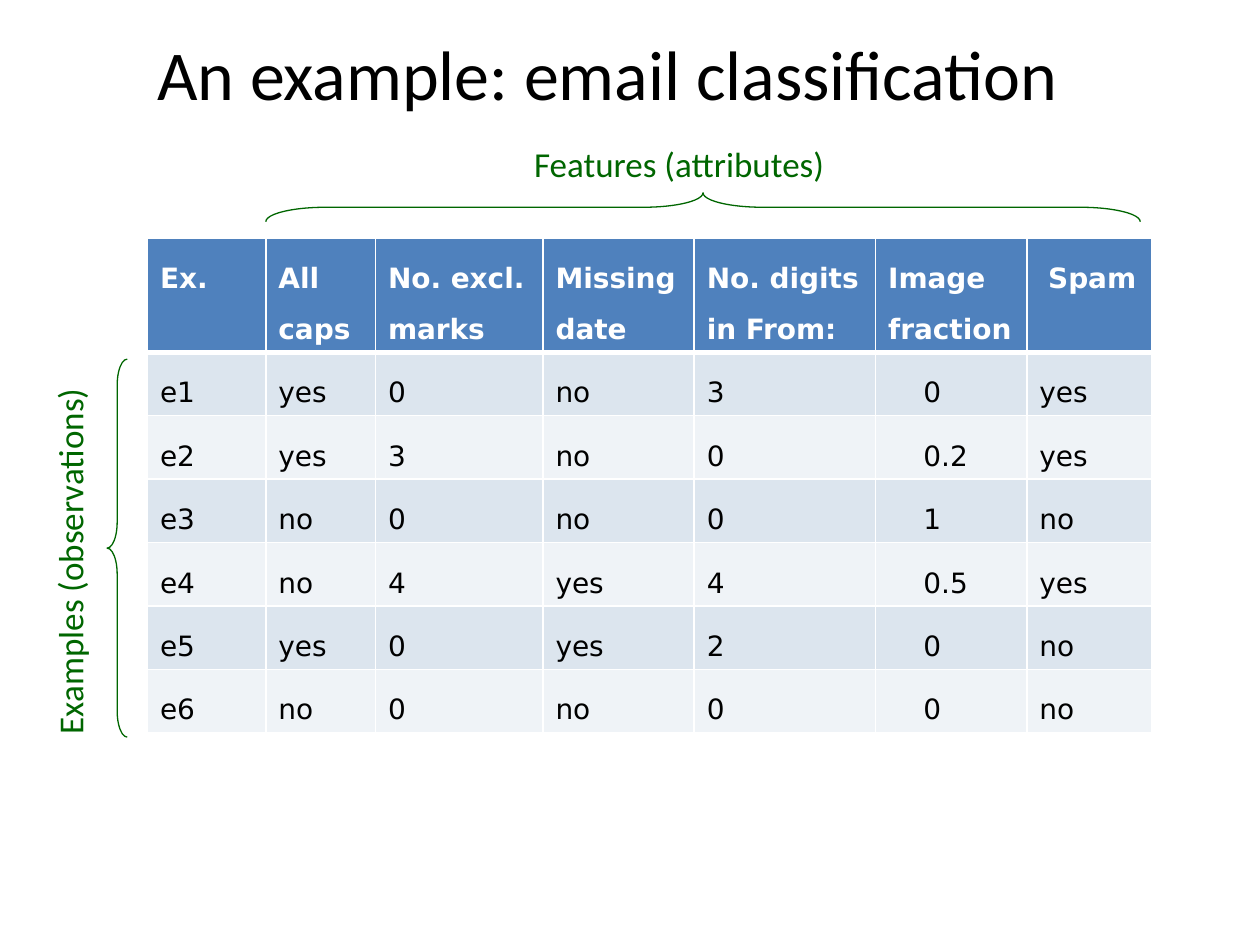
from lxml import etree
from pptx import Presentation
from pptx.dml.color import RGBColor
from pptx.enum import shapes, text
from pptx.oxml import ns
from pptx.util import Inches, Pt

BLACK = RGBColor(0x00, 0x00, 0x00)
WHITE = RGBColor(0xFF, 0xFF, 0xFF)
GREEN = RGBColor(0x00, 0x66, 0x00)
BLUE = RGBColor(0x4F, 0x81, 0xBD)
BANDS = RGBColor(0xDC, 0xE5, 0xEE), RGBColor(0xEF, 0xF3, 0xF7)

COLS = [0.94, 0.87, 1.33, 1.2, 1.44, 1.2, 0.99]
HEAD = ["Ex.", "All caps", "No. excl. marks", "Missing date",
        "No. digits in From:", "Image fraction", "Spam"]
ROWS = [
    ["e1", "yes", "0", "no", "3", "0", "yes"],
    ["e2", "yes", "3", "no", "0", "0.2", "yes"],
    ["e3", "no", "0", "no", "0", "1", "no"],
    ["e4", "no", "4", "yes", "4", "0.5", "yes"],
    ["e5", "yes", "0", "yes", "2", "0", "no"],
    ["e6", "no", "0", "no", "0", "0", "no"],
]


def write(frame, words, size=20, color=BLACK, font="Calibri", bold=False,
          align=text.PP_ALIGN.LEFT, anchor=text.MSO_ANCHOR.TOP):
    """Put formatted words in a text frame and return the paragraph."""
    frame.word_wrap = True
    frame.vertical_anchor = anchor
    para = frame.paragraphs[0]
    para.alignment = align
    run = para.add_run()
    run.text = words
    run.font.size = Pt(size)
    run.font.name = font
    run.font.bold = bold
    run.font.color.rgb = color
    return para


def label(slide, box, words, turn=0, **style):
    """Add a text box, turned about its centre."""
    item = slide.shapes.add_textbox(*map(Inches, box))
    item.rotation = turn
    write(item.text_frame, words, **style)


def brace(slide, box, turn, curl):
    """Draw a brace that fills the box once turned."""
    left, top, width, height = box
    if turn == 270:
        left += (width - height) / 2
        top += (height - width) / 2
        width, height = height, width
    item = slide.shapes.add_shape(shapes.MSO_SHAPE.RIGHT_BRACE,
                                  *map(Inches, (left, top, width, height)))
    item.rotation = turn
    item.adjustments[0] = curl
    item.shadow.inherit = False
    item.fill.background()
    item.line.color.rgb = GREEN
    item.line.width = Pt(0.75)


def edge(cell, side, width):
    """Add a white border to one side of a cell."""
    props = cell._tc.get_or_add_tcPr()
    line = etree.SubElement(props, ns.qn(f"a:ln{side}"), w=str(Pt(width)))
    fill = etree.SubElement(line, ns.qn("a:solidFill"))
    etree.SubElement(fill, ns.qn("a:srgbClr"), val=str(WHITE))


def fill_cell(cell, words, row, col):
    """Write and colour one table cell."""
    head = row == 0
    for side in "LRTB":
        thick = (row, side) in ((0, "B"), (1, "T"))
        edge(cell, side, 3 if thick else 1)
    cell.fill.solid()
    cell.fill.fore_color.rgb = BLUE if head else BANDS[(row - 1) % 2]
    if head and col == 6:
        cell.margin_left = Inches(0.17)
    elif not head and col == 5:
        cell.margin_left = Inches(0.38)
    para = write(cell.text_frame, words, size=16, font="DejaVu Sans",
                 bold=head, color=WHITE if head else BLACK)
    para.line_spacing = Pt(29)
    before = etree.SubElement(para._p.get_or_add_pPr(), ns.qn("a:spcBef"))
    etree.SubElement(before, ns.qn("a:spcPct"), val="20000")


def grid(slide, box):
    """Build the table of examples."""
    data = [HEAD] + ROWS
    table = slide.shapes.add_table(len(data), len(COLS), *map(Inches, box)).table
    for col, width in zip(table.columns, COLS):
        col.width = Inches(width)
    for r, line in enumerate(data):
        table.rows[r].height = Inches(0.5 if r else 0.89)
        for c, words in enumerate(line):
            fill_cell(table.cell(r, c), words, r, c)


def main():
    """Build and save the slide."""
    deck = Presentation()
    deck.slide_width, deck.slide_height = Inches(10), Inches(7.5)
    slide = deck.slides.add_slide(deck.slide_layouts[6])
    label(slide, (1.14, 0.25, 7.36, 0.65), "An example: email classification",
          size=40, align=text.PP_ALIGN.CENTER, anchor=text.MSO_ANCHOR.MIDDLE)
    label(slide, (4.14, 1.08, 3.1, 0.43), "Features (attributes)", color=GREEN)
    brace(slide, (2.11, 1.53, 6.94, 0.23), 270, 2.07)
    brace(slide, (0.85, 2.85, 0.16, 3), 180, 1.3)
    label(slide, (-1.28, 3.88, 3.66, 0.43), "Examples (observations)",
          turn=270, color=GREEN)
    grid(slide, (1.17, 1.89, 7.97, 3.92))
    deck.save("out.pptx")


if __name__ == "__main__":
    main()
